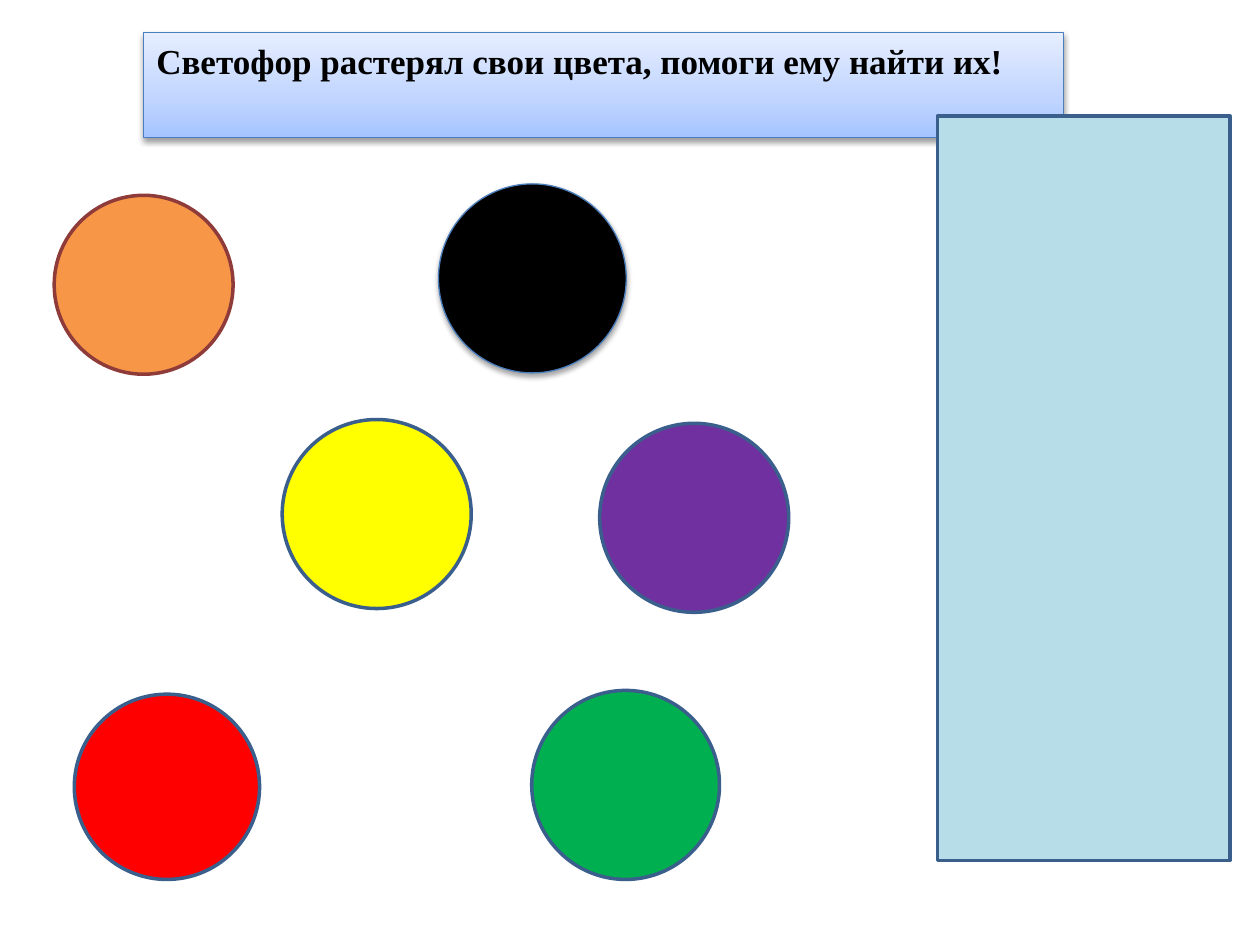
import copy
import pptx
import pptx.dml.color
import pptx.enum.shapes
import pptx.enum.text
import pptx.oxml
import pptx.oxml.ns
import pptx.util

Inches = pptx.util.Inches
Pt = pptx.util.Pt
RGB = pptx.dml.color.RGBColor
KIND = pptx.enum.shapes.MSO_SHAPE
TEXT = pptx.enum.text

BLACK = RGB(0x00, 0x00, 0x00)
ORANGE = RGB(0xF7, 0x96, 0x46)
PURPLE = RGB(0x70, 0x30, 0xA0)
YELLOW = RGB(0xFF, 0xFF, 0x00)
RED = RGB(0xFF, 0x00, 0x00)
GREEN = RGB(0x00, 0xB0, 0x50)
PALE = RGB(0xB7, 0xDE, 0xE8)
NAVY = RGB(0x3A, 0x5F, 0x8C)
BROWN = RGB(0x8E, 0x3B, 0x39)
BLUE = RGB(0x4B, 0x7E, 0xBC)

TITLE = "Светофор растерял свои цвета, помоги ему найти их!"
BANNER = (1.14, 0.26, 7.3, 0.44)
STOPS = [
    (0, RGB(0xA4, 0xC4, 0xFF)),
    (0.35, RGB(0xBF, 0xD4, 0xFF)),
    (1, RGB(0xE6, 0xEE, 0xFF)),
]
PANEL = (7.44, 0.92, 2.32, 5.91)
LIGHTS = [
    ((0.43, 1.55, 1.42, 1.42), ORANGE, BROWN, 2),
    ((3.48, 1.46, 1.49, 1.5), BLACK, BLUE, 0.75),
    ((4.76, 3.36, 1.5, 1.5), PURPLE, NAVY, 2),
    ((2.24, 3.33, 1.5, 1.5), YELLOW, NAVY, 2),
    ((0.59, 5.51, 1.47, 1.47), RED, NAVY, 2),
    ((4.22, 5.48, 1.49, 1.5), GREEN, NAVY, 2),
]


def edge(shape, color, width):
    shape.line.color.rgb = color
    shape.line.width = Pt(width)
    shape.shadow.inherit = False


def draw(slide, kind, box, fill, color, width):
    shape = slide.shapes.add_shape(kind, *map(Inches, box))
    shape.fill.solid()
    shape.fill.fore_color.rgb = fill
    edge(shape, color, width)
    return shape


def shade(shape, dist, alpha):
    effects = shape._element.spPr.find(pptx.oxml.ns.qn("a:effectLst"))
    effects.append(pptx.oxml.parse_xml(
        f'<a:outerShdw {pptx.oxml.ns.nsdecls("a")} blurRad="{Pt(3.1)}" '
        f'dist="{Pt(dist)}" dir="5400000" rotWithShape="0">'
        f'<a:srgbClr val="{BLACK}"><a:alpha val="{alpha * 1000}"/></a:srgbClr>'
        '</a:outerShdw>'))


def blend(fill):
    fill.gradient()
    fill.gradient_angle = 90
    group = fill._fill._gradFill.gsLst
    group.append(copy.deepcopy(group[0]))
    for stop, (place, color) in zip(fill.gradient_stops, STOPS):
        stop.position = place
        stop.color.rgb = color


def head(slide):
    title = slide.shapes.title
    title.left, title.top, title.width, title.height = map(Inches, BANNER)
    blend(title.fill)
    edge(title, BLUE, 0.75)
    shade(title, 1.6, 38)
    frame = title.text_frame
    frame.text = TITLE
    frame.word_wrap = True
    frame.auto_size = TEXT.MSO_AUTO_SIZE.SHAPE_TO_FIT_TEXT
    frame.vertical_anchor = TEXT.MSO_ANCHOR.TOP
    para = frame.paragraphs[0]
    para.alignment = TEXT.PP_ALIGN.LEFT
    para.font.name = "Times New Roman"
    para.font.size = Pt(20)
    para.font.bold = True
    para.font.color.rgb = BLACK


def main():
    deck = pptx.Presentation()
    deck.slide_width, deck.slide_height = Inches(10), Inches(7.5)
    slide = deck.slides.add_slide(deck.slide_layouts[5])
    head(slide)
    draw(slide, KIND.RECTANGLE, PANEL, PALE, NAVY, 2)
    for box, fill, color, width in LIGHTS:
        light = draw(slide, KIND.OVAL, box, fill, color, width)
        if fill == BLACK:
            shade(light, 1.8, 35)
    deck.save("out.pptx")


if __name__ == "__main__":
    main()
